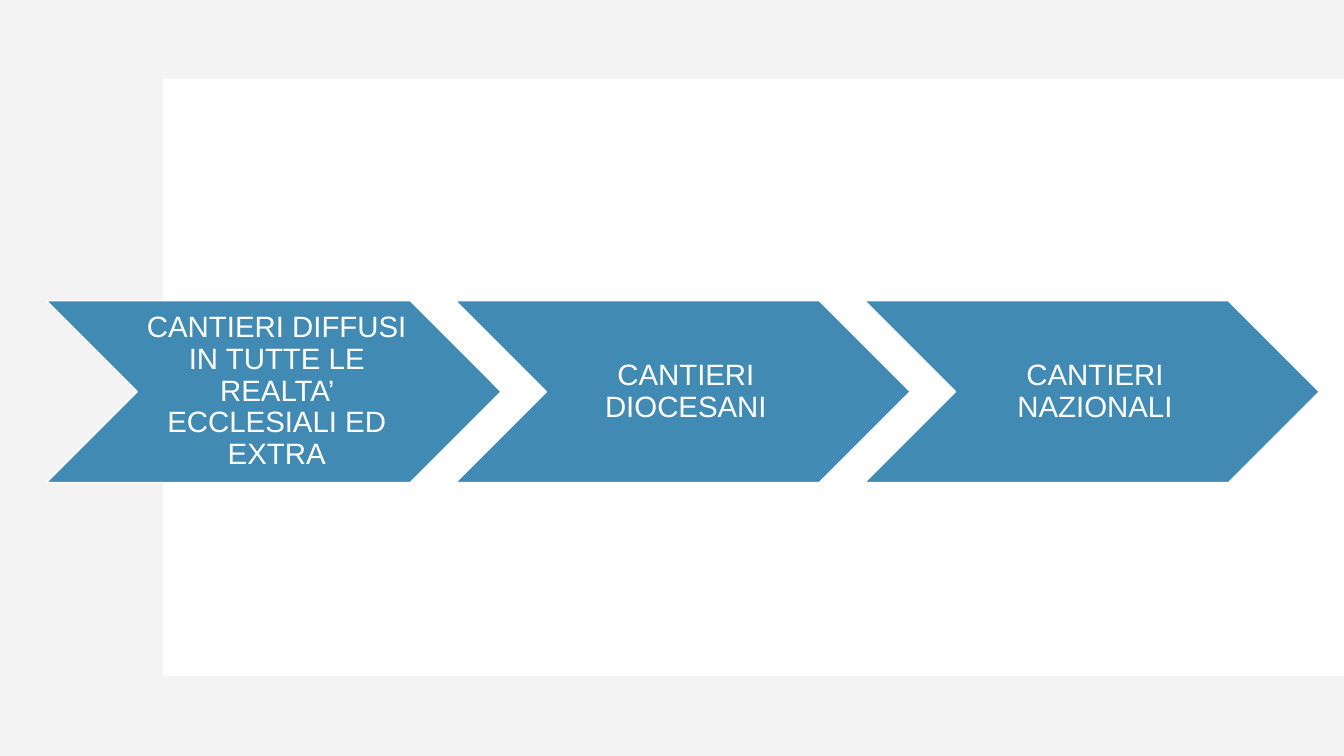
from lxml.etree import SubElement
from pptx import Presentation
from pptx.dml.color import RGBColor
from pptx.enum.shapes import MSO_SHAPE as Shape
from pptx.enum.text import MSO_ANCHOR as Anchor, PP_ALIGN as Align
from pptx.oxml.ns import qn
from pptx.util import Cm, Pt

COLORS = {"frame": "DDDDDD", "white": "FFFFFF", "stage": "418AB3"}
STAGES = [
    "CANTIERI DIFFUSI IN TUTTE LE REALTA’ ECCLESIALI ED EXTRA",
    "CANTIERI DIOCESANI",
    "CANTIERI NAZIONALI",
]
WIDTH, HEIGHT = 33.87, 19.05
STAGE_LEFT, STAGE_TOP, STAGE_STEP = 1.17, 7.58, 10.31
STAGE_WIDTH, STAGE_HEIGHT = 11.46, 4.58

presentation = Presentation()
presentation.slide_width, presentation.slide_height = Cm(WIDTH), Cm(HEIGHT)
slide = presentation.slides.add_slide(presentation.slide_layouts[6])


def add_filled(kind, left, top, width, height, color):
    shape = slide.shapes.add_shape(kind, Cm(left), Cm(top), Cm(width), Cm(height))
    shape.shadow.inherit = False
    shape.fill.solid()
    shape.fill.fore_color.rgb = RGBColor.from_string(COLORS[color])
    shape.line.fill.background()
    return shape


# Pale frame, 35% opaque, with a white panel running to the right edge
frame = add_filled(Shape.RECTANGLE, 0, 0, WIDTH, HEIGHT, "frame")
frame_color = frame.fill._xPr.find(qn("a:solidFill"))[0]
SubElement(frame_color, qn("a:alpha"), val="35000")
add_filled(Shape.RECTANGLE, 4.11, 1.98, WIDTH - 4.11, 15.06, "white")

# Row of stages
for index, label in enumerate(STAGES):
    stage = add_filled(Shape.CHEVRON, STAGE_LEFT + index * STAGE_STEP, STAGE_TOP,
                       STAGE_WIDTH, STAGE_HEIGHT, "stage")
    stage.line.color.rgb = RGBColor.from_string(COLORS["white"])
    stage.line.width = Pt(1)

    text = stage.text_frame
    text.text = label
    text.word_wrap = True
    text.vertical_anchor = Anchor.MIDDLE
    text.margin_left = Cm(0.22)
    text.margin_top = text.margin_right = text.margin_bottom = Cm(0.07)

    paragraph = text.paragraphs[0]
    paragraph.alignment = Align.CENTER
    paragraph.line_spacing = 0.9
    font = paragraph.runs[0].font
    font.name, font.size = "Arial", Pt(21)
    font.color.rgb = RGBColor.from_string(COLORS["white"])

presentation.save("out.pptx")
